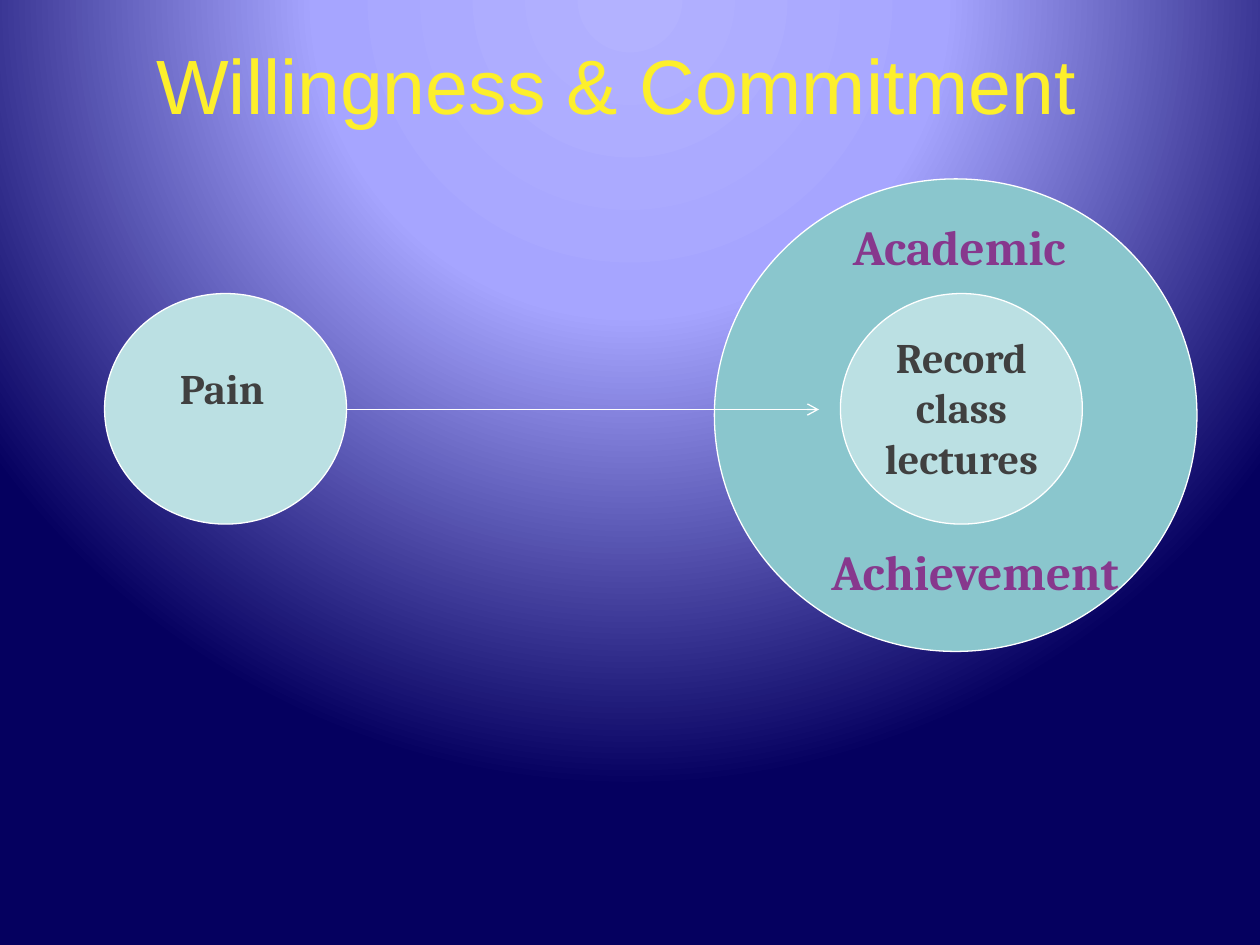
from dataclasses import dataclass

from lxml.etree import SubElement
from pptx import Presentation
from pptx.dml.color import RGBColor
from pptx.enum.shapes import MSO_CONNECTOR, MSO_SHAPE
from pptx.enum.text import MSO_ANCHOR, PP_ALIGN
from pptx.oxml import parse_xml
from pptx.oxml.ns import nsdecls, qn
from pptx.util import Inches, Pt


@dataclass(frozen=True)
class Theme:
    """Colours, fonts and sizes of the slide."""
    glow: tuple = ((0, "B3B2FF"), (40, "A6A5FF"), (100, "05005F"))
    outer: str = "8AC6CD"
    inner: str = "BBE0E3"
    line: str = "FFFFFF"
    title: str = "FDEF2B"
    goal: str = "87388D"
    step: str = "404040"
    title_font: str = "Arial"
    label_font: str = "Cambria"
    title_size: int = 44
    goal_size: int = 28
    step_size: int = 24
    line_width: float = 0.75


THEME = Theme()


def paint_background(page):
    """Fill the page with a round glow centred above its top edge."""
    stops = "".join(
        f'<a:gs pos="{place * 1000}"><a:srgbClr val="{color}"/></a:gs>'
        for place, color in THEME.glow)
    background = parse_xml(
        f'<p:bg {nsdecls("p", "a")}><p:bgPr><a:gradFill rotWithShape="1">'
        f'<a:gsLst>{stops}</a:gsLst><a:path path="circle">'
        '<a:fillToRect l="50000" t="-80000" r="50000" b="180000"/></a:path>'
        '</a:gradFill><a:effectLst/></p:bgPr></p:bg>')
    page.element.cSld.insert(0, background)


def write(frame, text, font, size, color, bold=False, align=PP_ALIGN.LEFT):
    """Put one formatted run into a text frame."""
    frame.word_wrap = True
    para = frame.paragraphs[0]
    para.alignment = align
    span = para.add_run()
    span.text = text
    span.font.name = font
    span.font.size = Pt(size)
    span.font.bold = bold
    span.font.color.rgb = RGBColor.from_string(color)


def style_line(line):
    """Give an outline or connector the thin white stroke."""
    line.color.rgb = RGBColor.from_string(THEME.line)
    line.width = Pt(THEME.line_width)


def add_circle(shapes, bounds, color):
    """Draw an outlined ellipse."""
    circle = shapes.add_shape(MSO_SHAPE.OVAL, *map(Inches, bounds))
    circle.shadow.inherit = False
    circle.fill.solid()
    circle.fill.fore_color.rgb = RGBColor.from_string(color)
    style_line(circle.line)


def add_label(shapes, bounds, text, size, color, align=PP_ALIGN.LEFT):
    """Add a bold label in its own text box."""
    box = shapes.add_textbox(*map(Inches, bounds))
    write(box.text_frame, text, THEME.label_font, size, color, True, align)


def add_arrow(shapes, left, right, height):
    """Draw a level arrow pointing right."""
    arrow = shapes.add_connector(
        MSO_CONNECTOR.STRAIGHT,
        Inches(left), Inches(height), Inches(right), Inches(height))
    style_line(arrow.line)
    SubElement(arrow.line._get_or_add_ln(), qn("a:tailEnd"), type="arrow")
    SubElement(arrow.element.spPr, qn("a:effectLst"))


def set_title(page, text):
    """Place and fill the title, dropping the unused subtitle."""
    subtitle = page.placeholders[1].element
    subtitle.getparent().remove(subtitle)
    title = page.shapes.title
    title.left, title.top, title.width, title.height = map(
        Inches, (0.21, 0.08, 9.37, 1.17))
    title.text_frame.vertical_anchor = MSO_ANCHOR.MIDDLE
    write(title.text_frame, text, THEME.title_font, THEME.title_size,
          THEME.title, align=PP_ALIGN.CENTER)


def main():
    """Build and save the slide."""
    deck = Presentation()
    deck.slide_width, deck.slide_height = Inches(10), Inches(7.5)
    page = deck.slides.add_slide(deck.slide_layouts[0])
    paint_background(page)
    set_title(page, "Willingness & Commitment")

    goal = page.shapes.add_group_shape().shapes
    add_circle(goal, (5.67, 1.42, 3.83, 3.75), THEME.outer)
    add_label(goal, (6.67, 1.67, 2.33, 0.57), "Academic",
              THEME.goal_size, THEME.goal)

    add_circle(page.shapes, (0.83, 2.33, 1.92, 1.83), THEME.inner)
    add_label(page.shapes, (1.33, 2.83, 1, 0.5), "Pain",
              THEME.step_size, THEME.step)
    add_arrow(page.shapes, 2.75, 6.5, 3.25)

    step = page.shapes.add_group_shape().shapes
    add_circle(step, (6.67, 2.33, 1.92, 1.83), THEME.inner)
    add_label(step, (6.67, 2.58, 1.92, 1.31), "Record class lectures",
              THEME.step_size, THEME.step, PP_ALIGN.CENTER)
    add_label(page.shapes, (6.5, 4.25, 2.5, 0.57), "Achievement",
              THEME.goal_size, THEME.goal)

    deck.save("out.pptx")


if __name__ == "__main__":
    main()
